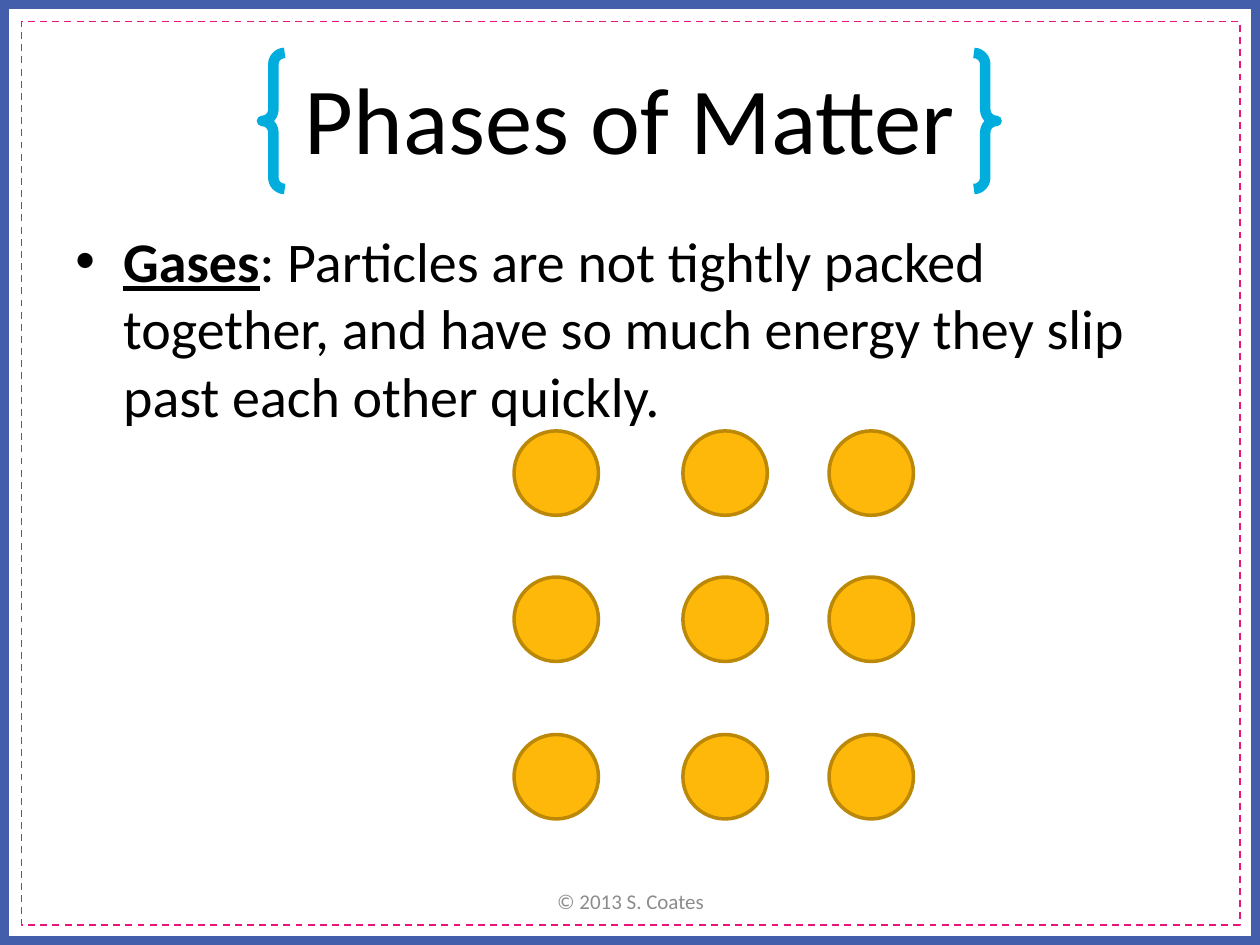
"""Build the Phases of Matter slide about gases."""
from dataclasses import dataclass
from itertools import product
from typing import Optional

from lxml import etree
from pptx import Presentation
from pptx.dml.color import RGBColor
from pptx.enum.dml import MSO_LINE
from pptx.enum.shapes import MSO_SHAPE
from pptx.enum.text import MSO_ANCHOR, PP_ALIGN
from pptx.oxml.ns import qn
from pptx.util import Inches, Pt

RECTANGLE, BRACES, OVAL = MSO_SHAPE.RECTANGLE, MSO_SHAPE.DOUBLE_BRACE, MSO_SHAPE.OVAL
TOP, MIDDLE = MSO_ANCHOR.TOP, MSO_ANCHOR.MIDDLE
LEFT, CENTER = PP_ALIGN.LEFT, PP_ALIGN.CENTER
DASH = MSO_LINE.DASH

BLACK = RGBColor(0x00, 0x00, 0x00)
GRAY = RGBColor(0x8C, 0x8C, 0x8C)
BLUE = RGBColor(0x43, 0x5E, 0xAA)
PINK = RGBColor(0xEA, 0x15, 0x7A)
CYAN = RGBColor(0x00, 0xAD, 0xDC)
GOLD = RGBColor(0xFE, 0xB8, 0x0A)
DARK_GOLD = RGBColor(0xBC, 0x88, 0x07)

FONT = "Calibri"
PARTICLE_SIZE = 0.67
PARTICLE_COLUMNS = (4.08, 5.42, 6.58)
PARTICLE_ROWS = (3.42, 4.58, 5.83)


@dataclass(frozen=True)
class Outline:
    kind: MSO_SHAPE
    box: tuple[float, float, float, float]
    color: RGBColor
    weight: float
    fill: Optional[RGBColor] = None
    dash: Optional[MSO_LINE] = None


FRAME = (
    Outline(RECTANGLE, (0, 0, 10, 7.5), BLUE, 10),
    Outline(RECTANGLE, (0.17, 0.17, 9.67, 7.17), PINK, 1, dash=DASH),
    Outline(BRACES, (2.08, 0.42, 5.83, 1.08), CYAN, 6),
)
PARTICLES = tuple(
    Outline(OVAL, (left, top, PARTICLE_SIZE, PARTICLE_SIZE), DARK_GOLD, 2, GOLD)
    for top, left in product(PARTICLE_ROWS, PARTICLE_COLUMNS)
)


def draw_outline(slide, outline: Outline) -> None:
    """Draw one outlined shape, filled when it has a fill colour."""
    shape = slide.shapes.add_shape(outline.kind, *map(Inches, outline.box))
    shape.shadow.inherit = False
    if outline.fill is None:
        shape.fill.background()
    else:
        shape.fill.solid()
        shape.fill.fore_color.rgb = outline.fill
    shape.line.color.rgb = outline.color
    shape.line.width = Pt(outline.weight)
    if outline.dash is not None:
        shape.line.dash_style = outline.dash


def add_text(slide, text: str, box: tuple[float, float, float, float], *,
             size: float, color: RGBColor = BLACK, align: PP_ALIGN = CENTER,
             anchor: MSO_ANCHOR = MIDDLE, term: str = "", hanging: float = 0) -> None:
    """Add a text box, with an optional emphasised term and hanging bullet."""
    text_box = slide.shapes.add_textbox(*map(Inches, box))
    frame = text_box.text_frame
    frame.word_wrap = True
    frame.vertical_anchor = anchor
    paragraph = frame.paragraphs[0]
    paragraph.alignment = align
    if hanging:
        properties = paragraph._p.get_or_add_pPr()
        properties.set("marL", str(Inches(hanging)))
        properties.set("indent", str(-Inches(hanging)))
        etree.SubElement(properties, qn("a:buFont"), typeface="Arial")
        etree.SubElement(properties, qn("a:buChar"), char="•")
    for wording, emphasised in ((term, True), (text, False)):
        if wording:
            run = paragraph.add_run()
            run.text = wording
            run.font.name = FONT
            run.font.size = Pt(size)
            run.font.color.rgb = color
            run.font.bold = run.font.underline = emphasised


def main() -> None:
    """Create and save the presentation."""
    presentation = Presentation()
    presentation.slide_width, presentation.slide_height = Inches(10), Inches(7.5)
    slide = presentation.slides.add_slide(presentation.slide_layouts[6])
    for border in FRAME:
        draw_outline(slide, border)
    add_text(slide, "Phases of Matter", (0.5, 0.3, 9, 1.25), size=54)
    add_text(slide, ": Particles are not tightly packed together, and have so much "
             "energy they slip past each other quickly.", (0.5, 1.75, 9, 1.92),
             size=32, align=LEFT, anchor=TOP, term="Gases", hanging=0.38)
    add_text(slide, "© 2013 S. Coates", (3.42, 6.95, 3.17, 0.4), size=12, color=GRAY)
    for particle in PARTICLES:
        draw_outline(slide, particle)
    presentation.save("out.pptx")


if __name__ == "__main__":
    main()
